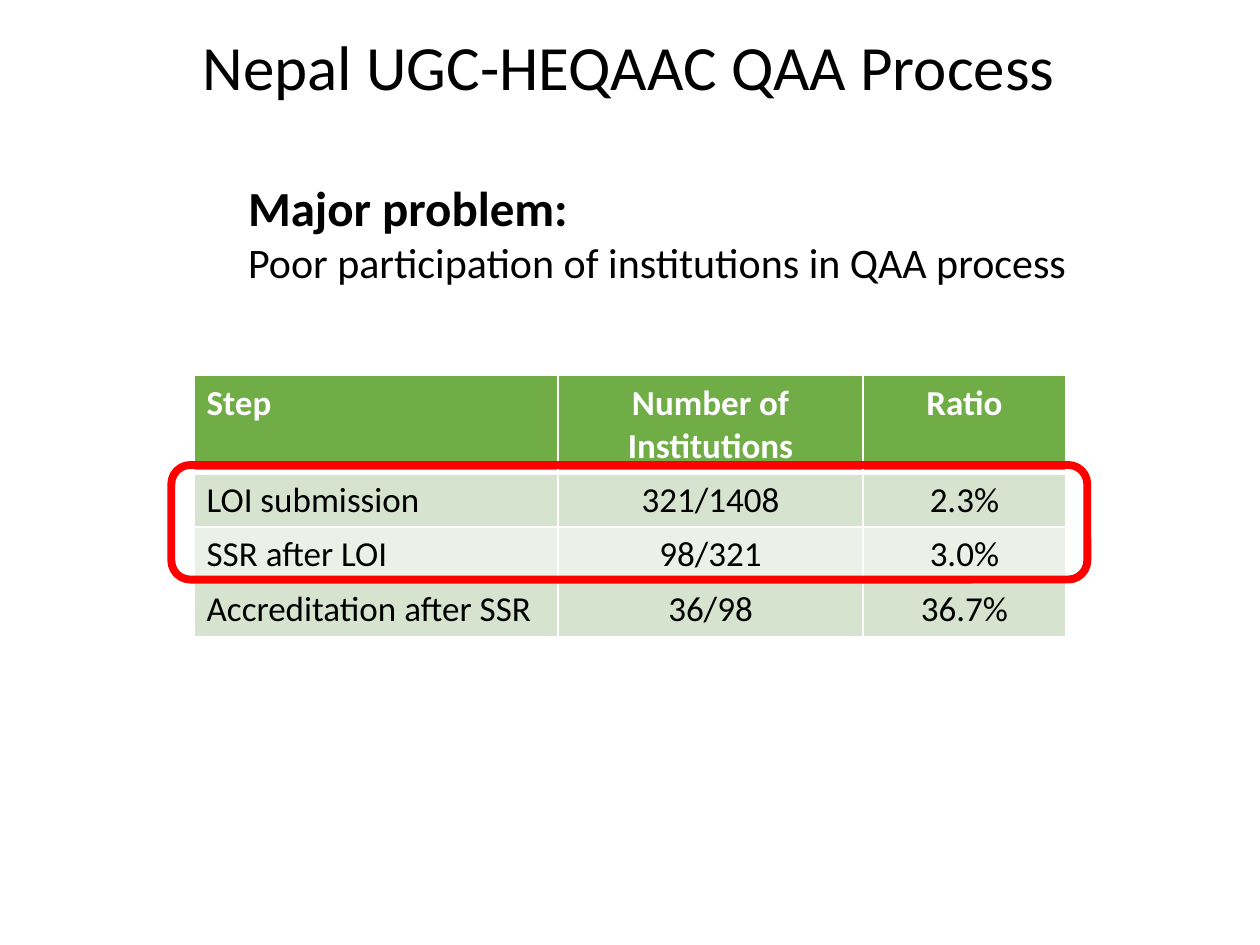
from dataclasses import dataclass

from lxml.etree import SubElement
from pptx import Presentation
from pptx.dml.color import RGBColor
from pptx.enum.shapes import MSO_SHAPE
from pptx.enum.text import PP_ALIGN
from pptx.oxml.ns import qn
from pptx.util import Inches, Pt


@dataclass(frozen=True)
class Theme:
    """Colours, font and type sizes of the slide."""
    font: str = "Calibri"
    ink: RGBColor = RGBColor(0x00, 0x00, 0x00)
    white: RGBColor = RGBColor(0xFF, 0xFF, 0xFF)
    header: RGBColor = RGBColor(0x70, 0xAD, 0x47)
    bands: tuple = (RGBColor(0xD5, 0xE3, 0xCF), RGBColor(0xEB, 0xF1, 0xE9))
    highlight: RGBColor = RGBColor(0xFF, 0x00, 0x00)
    title_size: Pt = Pt(36)
    heading_size: Pt = Pt(28)
    body_size: Pt = Pt(24)
    table_size: Pt = Pt(20)
    grid_width: Pt = Pt(1)
    header_rule_width: Pt = Pt(3)
    highlight_width: Pt = Pt(4.5)


THEME = Theme()
STEPS = (
    ("Step", "Number of Institutions", "Ratio"),
    ("LOI submission", "321/1408", "2.3%"),
    ("SSR after LOI", "98/321", "3.0%"),
    ("Accreditation after SSR", "36/98", "36.7%"),
)
COLUMN_WIDTHS = (2.89, 2.42, 1.61)
HEADER_HEIGHT, ROW_HEIGHT = 0.77, 0.43


def write(paragraph, text, size, color=THEME.ink, bold=False):
    """Add one formatted run to a paragraph."""
    run = paragraph.add_run()
    run.text = text
    formats = {"name": THEME.font, "size": size, "bold": bold}
    for name, value in formats.items():
        setattr(run.font, name, value)
    run.font.color.rgb = color


def add_lines(slide, box, lines):
    """Place a text box with one paragraph for each (text, size, bold) line."""
    frame = slide.shapes.add_textbox(*map(Inches, box)).text_frame
    frame.word_wrap = True
    for index, (text, size, bold) in enumerate(lines):
        paragraph = frame.add_paragraph() if index else frame.paragraphs[0]
        write(paragraph, text, size, bold=bold)


def set_borders(cell, widths):
    """Draw white borders around a cell, given a width for each side."""
    properties = cell._tc.get_or_add_tcPr()
    for index, (side, width) in enumerate(widths.items()):
        line = SubElement(properties, qn(f"a:{side}"), w=str(int(width)))
        fill = SubElement(line, qn("a:solidFill"))
        SubElement(fill, qn("a:srgbClr"), val=str(THEME.white))
        properties.remove(line)
        properties.insert(index, line)


def add_steps_table(slide, box):
    """Place the table of process steps in its box."""
    shape = slide.shapes.add_table(len(STEPS), len(COLUMN_WIDTHS), *map(Inches, box))
    table = shape.table
    for column, width in zip(table.columns, COLUMN_WIDTHS):
        column.width = Inches(width)
    for row_index, (row, texts) in enumerate(zip(table.rows, STEPS)):
        is_header = row_index == 0
        row.height = Inches(HEADER_HEIGHT if is_header else ROW_HEIGHT)
        fill = THEME.header if is_header else THEME.bands[(row_index - 1) % 2]
        color = THEME.white if is_header else THEME.ink
        widths = dict.fromkeys(("lnL", "lnR", "lnT", "lnB"), THEME.grid_width)
        if is_header:
            widths["lnB"] = THEME.header_rule_width
        elif row_index == 1:
            widths["lnT"] = THEME.header_rule_width
        for column_index, (cell, text) in enumerate(zip(row.cells, texts)):
            cell.fill.solid()
            cell.fill.fore_color.rgb = fill
            set_borders(cell, widths)
            paragraph = cell.text_frame.paragraphs[0]
            paragraph.alignment = PP_ALIGN.CENTER if column_index else PP_ALIGN.LEFT
            write(paragraph, text, THEME.table_size, color, is_header)


def add_highlight(slide, box):
    """Place the rounded outline that marks the weak steps."""
    shape = slide.shapes.add_shape(MSO_SHAPE.ROUNDED_RECTANGLE, *map(Inches, box))
    shape.shadow.inherit = False
    shape.fill.background()
    shape.line.color.rgb = THEME.highlight
    shape.line.width = THEME.highlight_width


def main():
    """Build the slide and save it."""
    presentation = Presentation()
    presentation.slide_width = Inches(10)
    presentation.slide_height = Inches(7.5)
    slide = presentation.slides.add_slide(presentation.slide_layouts[6])
    add_lines(slide, (1.51, 0.17, 6.98, 0.71), [
        ("Nepal UGC-HEQAAC QAA Process", THEME.title_size, False),
    ])
    add_lines(slide, (1.87, 1.36, 6.82, 0.98), [
        ("Major problem:", THEME.heading_size, True),
        ("Poor participation of institutions in QAA process", THEME.body_size, False),
    ])
    add_steps_table(slide, (1.54, 2.98, 6.92, 2.07))
    add_highlight(slide, (1.36, 3.69, 7.27, 0.91))
    presentation.save("out.pptx")


if __name__ == "__main__":
    main()
